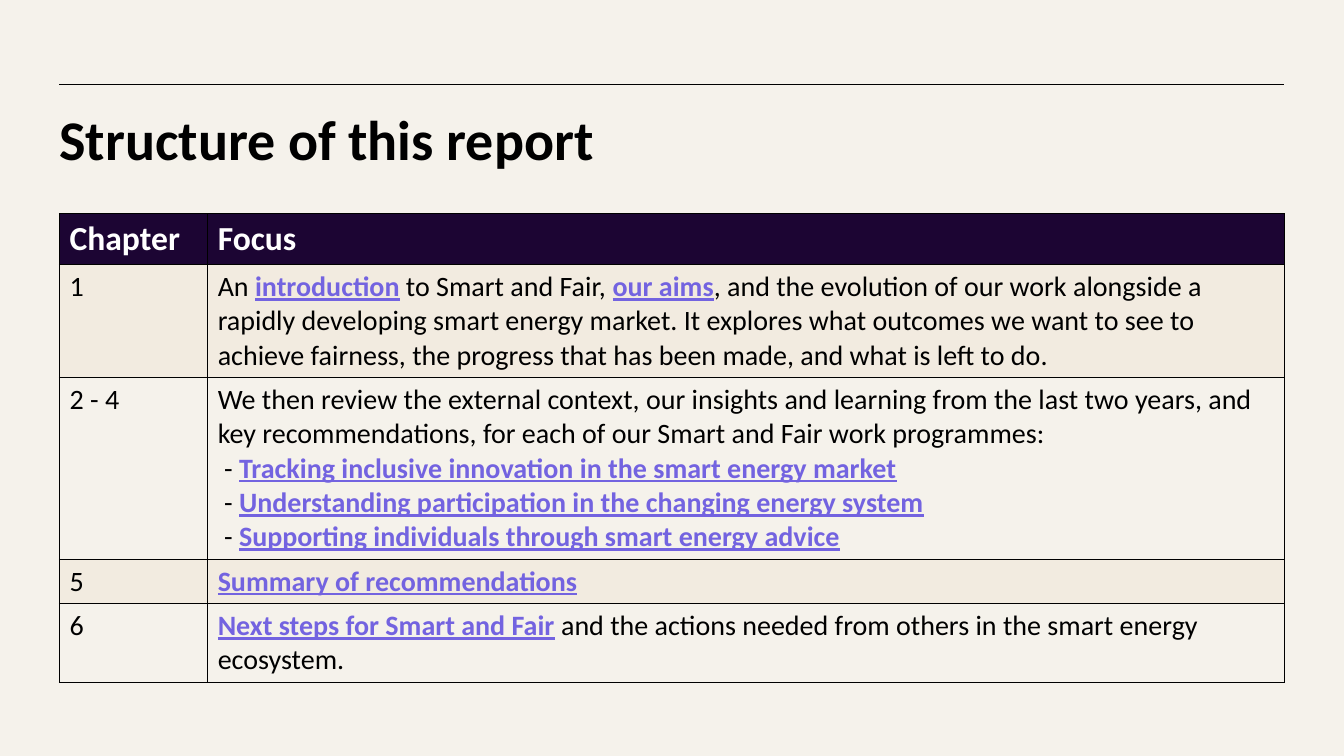
import pptx
import pptx.dml.color
import pptx.enum.text
import pptx.enum.shapes
import pptx.oxml
import pptx.oxml.ns
import pptx.util
from pptx.util import Inches

RGBColor = pptx.dml.color.RGBColor
CREAM = RGBColor(0xF5, 0xF2, 0xEB)
SAND = RGBColor(0xF2, 0xEB, 0xE0)
PLUM = RGBColor(0x1C, 0x05, 0x33)
VIOLET = RGBColor(0x73, 0x63, 0xE0)
BLACK = RGBColor(0, 0, 0)
WHITE = RGBColor(0xFF, 0xFF, 0xFF)

FONT = "Calibri"
LEFT, WIDTH = 0.59, 12.15
CHAPTER_WIDTH = 1.47

# Each chapter: label, row height, paragraphs of (text, is_reference) pieces
CHAPTERS = [
    ("1", 1.11, [[
        ("An ", False), ("introduction", True),
        (" to Smart and Fair, ", False), ("our aims", True),
        (", and the evolution of our work alongside a rapidly developing smart "
         "energy market. It explores what outcomes we want to see to achieve "
         "fairness, the progress that has been made, and what is left to do.", False),
    ]]),
    ("2 - 4", 1.79, [
        [("We then review the external context, our insights and learning from the "
          "last two years, and key recommendations, for each of our Smart and Fair "
          "work programmes:", False)],
        [(" - ", False),
         ("Tracking inclusive innovation in the smart energy market", True)],
        [(" - ", False),
         ("Understanding participation in the changing energy system", True)],
        [(" - ", False),
         ("Supporting individuals through smart energy advice", True)],
    ]),
    ("5", 0.44, [[("Summary of recommendations", True)]]),
    ("6", 0.77, [[
        ("Next steps for Smart and Fair", True),
        (" and the actions needed from others in the smart energy ecosystem.", False),
    ]]),
]


def write(paragraph, text, size=20, color=BLACK, bold=False, underline=False):
    run = paragraph.add_run()
    run.text = text
    font = run.font
    font.name = FONT
    font.size = pptx.util.Pt(size)
    font.bold = bold
    font.underline = underline
    font.color.rgb = color


def format_cell(cell, fill):
    properties = cell._tc.get_or_add_tcPr()
    for side in ("lnL", "lnR", "lnT", "lnB"):
        properties.append(pptx.oxml.parse_xml(
            f'<a:{side} {pptx.oxml.ns.nsdecls("a")} w="12700"><a:solidFill>'
            f'<a:srgbClr val="{BLACK}"/></a:solidFill></a:{side}>'))
    if fill is None:
        cell.fill.background()
    else:
        cell.fill.solid()
        cell.fill.fore_color.rgb = fill


def add_heading(slide, left, top, width):
    # Rule above the title
    rule = slide.shapes.add_connector(
        pptx.enum.shapes.MSO_CONNECTOR.STRAIGHT,
        Inches(left), Inches(top), Inches(left + width), Inches(top))
    rule.line.color.rgb = BLACK
    rule.line.width = pptx.util.Pt(1)
    rule._element.spPr.append(
        pptx.oxml.parse_xml(f'<a:effectLst {pptx.oxml.ns.nsdecls("a")}/>'))

    # Title
    title = slide.shapes.title
    title.left, title.top = Inches(left), Inches(top + 0.18)
    title.width, title.height = Inches(width), Inches(0.79)
    frame = title.text_frame
    frame.word_wrap = True
    frame.auto_size = pptx.enum.text.MSO_AUTO_SIZE.NONE
    frame.vertical_anchor = pptx.enum.text.MSO_ANCHOR.MIDDLE
    frame.margin_left, frame.margin_right = 0, Inches(0.1)
    frame.margin_top = frame.margin_bottom = Inches(0.05)
    heading = frame.paragraphs[0]
    heading.alignment = pptx.enum.text.PP_ALIGN.LEFT
    heading.line_spacing = 0.9
    write(heading, "Structure of this report", size=40, bold=True)


def add_chapter_table(slide, left, top, width):
    heights = [0.5] + [height for _, height, _ in CHAPTERS]
    table = slide.shapes.add_table(
        len(heights), 2, Inches(left), Inches(top),
        Inches(width), Inches(sum(heights))).table
    table.horz_banding = False
    table.columns[0].width = Inches(CHAPTER_WIDTH)
    table.columns[1].width = Inches(width - CHAPTER_WIDTH)
    for row, height in zip(table.rows, heights):
        row.height = Inches(height)

    # Header row
    for cell, label in zip(table.rows[0].cells, ("Chapter", "Focus")):
        format_cell(cell, PLUM)
        write(cell.text_frame.paragraphs[0], label, size=24, color=WHITE, bold=True)

    # Chapter rows, every other one shaded
    for index, (label, _, focus) in enumerate(CHAPTERS):
        chapter_cell, focus_cell = table.rows[index + 1].cells
        for cell in (chapter_cell, focus_cell):
            format_cell(cell, SAND if index % 2 == 0 else None)
        write(chapter_cell.text_frame.paragraphs[0], label)
        frame = focus_cell.text_frame
        for number, pieces in enumerate(focus):
            paragraph = frame.add_paragraph() if number else frame.paragraphs[0]
            for text, is_reference in pieces:
                write(paragraph, text, color=VIOLET if is_reference else BLACK,
                      bold=is_reference, underline=is_reference)


def main():
    deck = pptx.Presentation()
    deck.slide_width, deck.slide_height = Inches(13.33), Inches(7.5)
    slide = deck.slides.add_slide(deck.slide_layouts[5])
    slide.background.fill.solid()
    slide.background.fill.fore_color.rgb = CREAM
    add_heading(slide, LEFT, 0.84, WIDTH)
    add_chapter_table(slide, LEFT, 2.12, WIDTH)
    deck.save("out.pptx")


if __name__ == "__main__":
    main()
